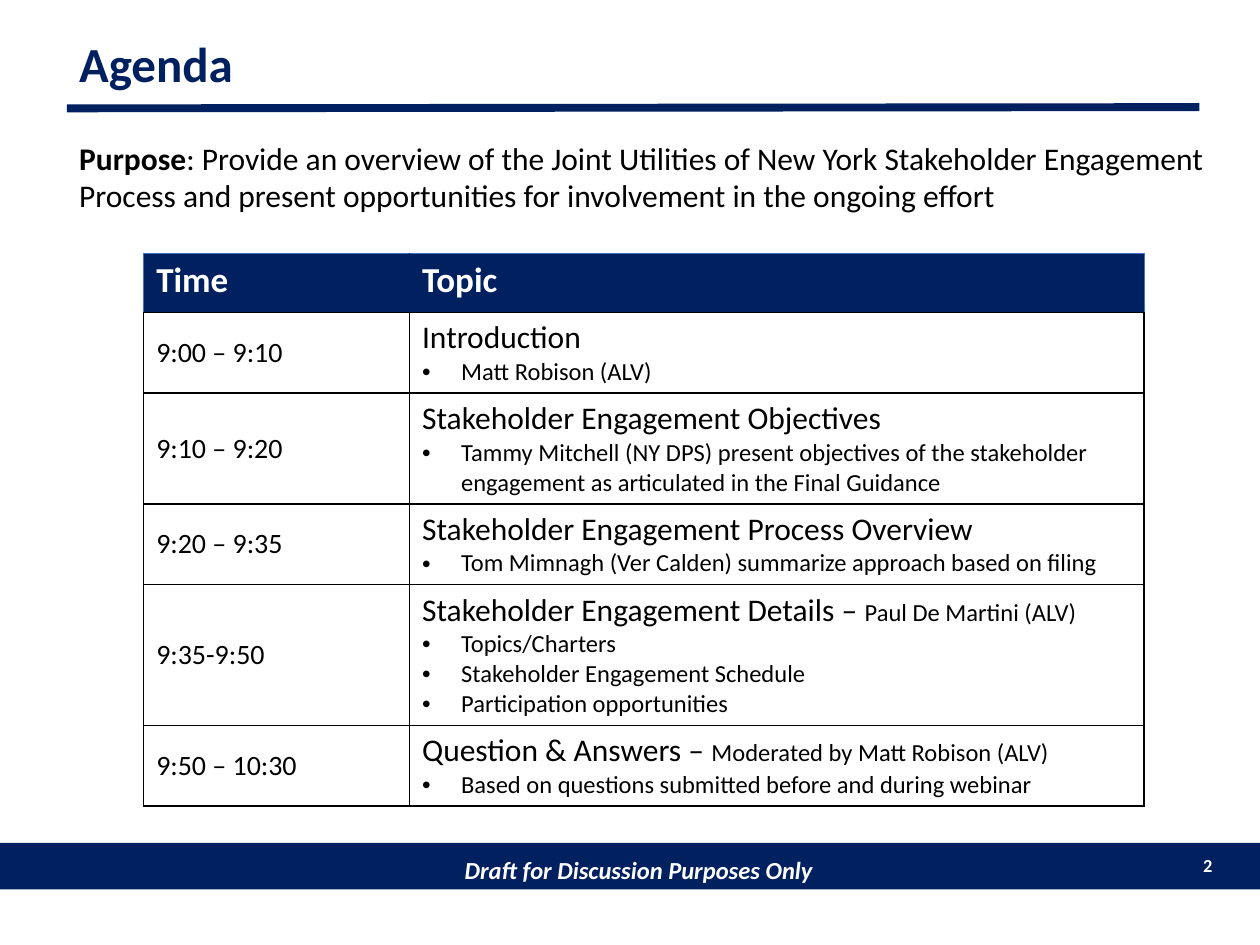
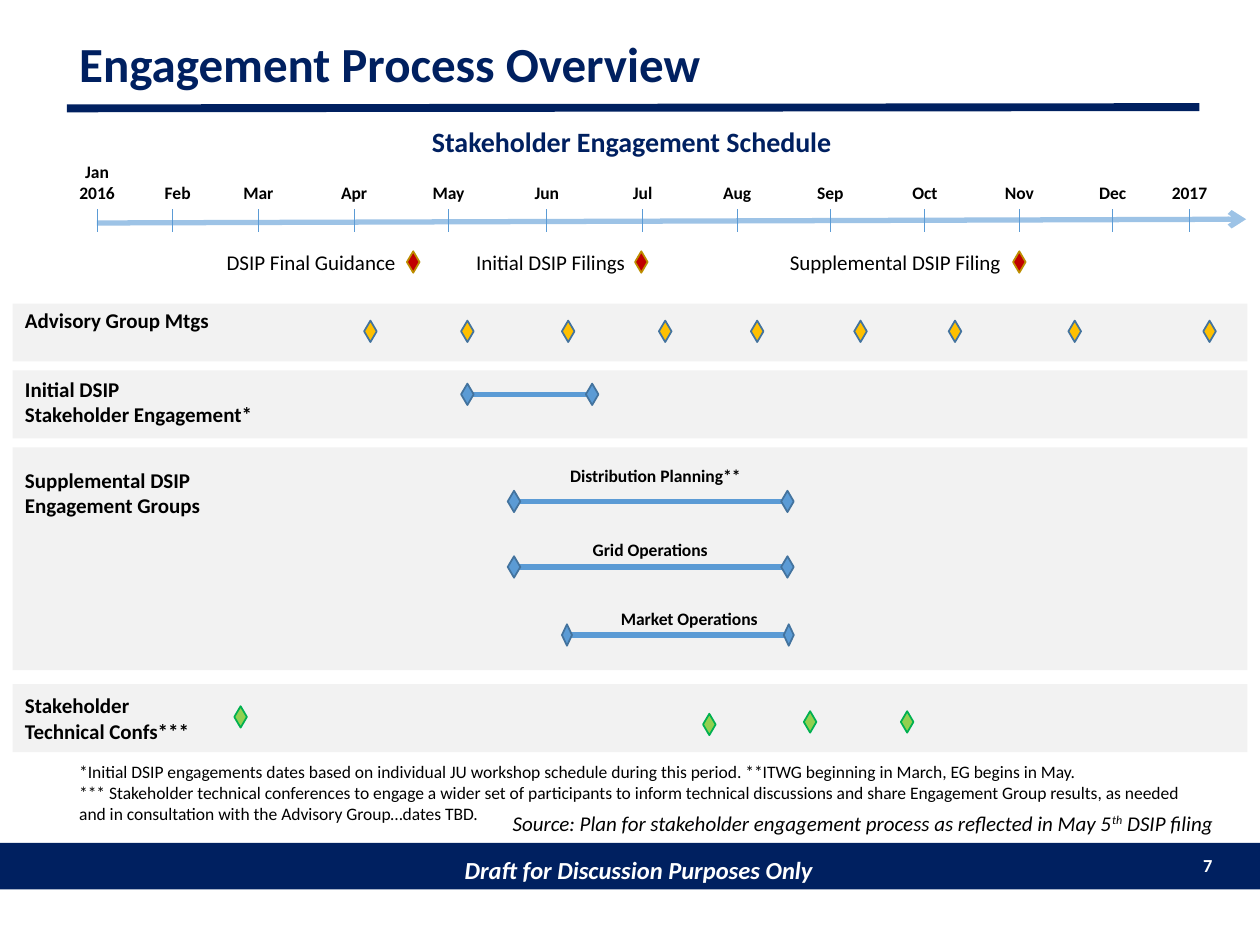
from pptx import Presentation, util as u
from pptx.dml.color import RGBColor
from pptx.enum import shapes, text
from pptx.oxml import parse_xml
from pptx.oxml.ns import nsdecls, qn
from lxml import etree

WIDTH, HEIGHT = 10, 7.5
FONT = "Calibri"
NAVY, BLACK, WHITE, BAND = "002060", "000000", "FFFFFF", "F2F2F2"
BLUE, PALE_BLUE, STEEL = "5B9BD5", "9DC3E6", "43739E"
GOLD, LIME, RED = ("FFC000", STEEL), ("92D050", "00B050"), ("C00000", "BD8E00")
SPAN = (BLUE, STEEL)
LEFT, CENTER, RIGHT = text.PP_ALIGN.LEFT, text.PP_ALIGN.CENTER, text.PP_ALIGN.RIGHT
TOP, MIDDLE, BOTTOM = text.MSO_ANCHOR.TOP, text.MSO_ANCHOR.MIDDLE, text.MSO_ANCHOR.BOTTOM

FOOTER = "Draft for Discussion Purposes Only"
PURPOSE = [("Purpose", {"bold": True}),
           ": Provide an overview of the Joint Utilities of New York Stakeholder Engagement "
           "Process and present opportunities for involvement in the ongoing effort"]
AGENDA_HEAD = ["Time", "Topic"]
AGENDA_COLUMNS = [2.11, 5.83]
AGENDA = [
    ("9:00 – 9:10", ["Introduction"], ["Matt Robison (ALV)"], 0.64),
    ("9:10 – 9:20", ["Stakeholder Engagement Objectives"],
     ["Tammy Mitchell (NY DPS) present objectives of the stakeholder engagement "
      "as articulated in the Final Guidance"], 0.88),
    ("9:20 – 9:35", ["Stakeholder Engagement Process Overview"],
     ["Tom Mimnagh (Ver Calden) summarize approach based on filing"], 0.64),
    ("9:35-9:50", ["Stakeholder Engagement Details – ", ("Paul De Martini (ALV)", {"size": 14})],
     ["Topics/Charters", "Stakeholder Engagement Schedule", "Participation opportunities"], 1.12),
    ("9:50 – 10:30", ["Question & Answers – ", ("Moderated by Matt Robison (ALV)", {"size": 14})],
     ["Based on questions submitted before and during webinar"], 0.64),
]

MONTHS = [("Jan 2016", 0.77), ("Feb", 1.37), ("Mar", 2.05), ("Apr", 2.81), ("May", 3.56),
          ("Jun", 4.34), ("Jul", 5.1), ("Aug", 5.85), ("Sep", 6.59), ("Oct", 7.34),
          ("Nov", 8.09), ("Dec", 8.83), ("2017", 9.44)]
LABEL_SHIFT = {"Feb": 0.04}
FILINGS = [("DSIP Final Guidance", 1.7, 1.56, 3.28),
           ("Initial DSIP Filings", 3.68, 1.4, 5.09),
           ("Supplemental DSIP Filing", 6.17, 1.96, 8.09)]
TRACKS = [(["Advisory Group Mtgs"], 2.41, 0.46, 2.39),
          (["Initial DSIP", "Stakeholder Engagement*"], 2.94, 0.54, 2.94),
          (["Supplemental DSIP", "Engagement Groups"], 3.55, 1.77, 3.66),
          (["Stakeholder", "Technical Confs***"], 5.43, 0.54, 5.45)]
MEETINGS = [2.94, 3.71, 4.51, 5.28, 6.01, 6.83, 7.58, 8.53, 9.6]
CONFERENCES = [(1.91, 5.69), (5.63, 5.75), (6.43, 5.73), (7.2, 5.73)]
ENGAGEMENTS = [(None, 3.71, 4.7, 3.13, 0.1), ("Distribution Planning**", 4.08, 6.25, 3.98, 0.1),
               ("Grid Operations", 4.08, 6.25, 4.5, 0.1), ("Market Operations", 4.5, 6.26, 5.04, 0.08)]
ENGAGEMENT_LABELS = {"Distribution Planning**": (5.2, 3.64), "Grid Operations": (5.16, 4.23),
                     "Market Operations": (5.47, 4.78)}
NOTES = ["*Initial DSIP engagements dates based on individual JU workshop schedule during this "
         "period. **ITWG beginning in March, EG begins in May.",
         "*** Stakeholder technical conferences to engage a wider set of participants to inform "
         "technical discussions and share Engagement Group results, as needed and in consultation "
         "with the Advisory Group…dates TBD."]
SOURCE = ["Source: Plan for stakeholder engagement process as reflected in May 5",
          ("th", {"raised": True}), " DSIP filing"]


def colour(value):
    return RGBColor.from_string(value)


def box(*lengths):
    return [u.Inches(length) for length in lengths]


def write(frame, paragraphs, size, ink=BLACK, bold=False, italic=False, align=LEFT, bullet=False):
    for i, parts in enumerate(paragraphs):
        paragraph = frame.paragraphs[0] if frame.text == "" and i == 0 else frame.add_paragraph()
        paragraph.alignment = align
        if bullet:
            properties = paragraph._p.get_or_add_pPr()
            properties.set("marL", str(u.Inches(0.31)))
            properties.set("indent", str(-u.Inches(0.31)))
            etree.SubElement(properties, qn("a:buFont")).set("typeface", "Arial")
            etree.SubElement(properties, qn("a:buChar")).set("char", "•")
        font = paragraph.font
        font.name, font.size, font.bold, font.italic = FONT, u.Pt(size), bold, italic
        font.color.rgb = colour(ink)
        for part in [parts] if isinstance(parts, str) else parts:
            words, style = (part, {}) if isinstance(part, str) else part
            run = paragraph.add_run()
            run.text = words
            if "size" in style:
                run.font.size = u.Pt(style["size"])
            if "bold" in style:
                run.font.bold = style["bold"]
            if "raised" in style:
                run._r.get_or_add_rPr().set("baseline", "30000")


def label(slide, at, paragraphs, size, anchor=TOP, wrap=True, **style):
    frame = slide.shapes.add_textbox(*box(*at)).text_frame
    frame.word_wrap = wrap
    frame.vertical_anchor = anchor
    write(frame, paragraphs, size, **style)
    return frame


def panel(slide, kind, at, fill, outline=None):
    shape = slide.shapes.add_shape(kind, *box(*at))
    shape.shadow.inherit = False
    shape.fill.solid()
    shape.fill.fore_color.rgb = colour(fill)
    if outline:
        shape.line.color.rgb = colour(outline)
        shape.line.width = u.Pt(1)
    else:
        shape.line.fill.background()
    return shape


def rule(slide, start, end, ink, weight, arrow=False):
    line = slide.shapes.add_connector(shapes.MSO_CONNECTOR.STRAIGHT, *box(*start, *end))
    line.line.color.rgb = colour(ink)
    line.line.width = u.Pt(weight)
    if arrow:
        etree.SubElement(line.line._get_or_add_ln(), qn("a:tailEnd")).set("type", "arrow")
    etree.SubElement(line._element.spPr, qn("a:effectLst"))


def diamond(slide, x, y, colours, width=0.1):
    height = 0.17
    panel(slide, shapes.MSO_SHAPE.FLOWCHART_DECISION,
          (x - width / 2, y - height / 2, width, height), *colours)


def start_slide(deck, title, number):
    slide = deck.slides.add_slide(deck.slide_layouts[6])
    footer = panel(slide, shapes.MSO_SHAPE.RECTANGLE, (0, 6.69, WIDTH, 0.37), NAVY).text_frame
    footer.margin_left = u.Inches(0.24)
    footer.margin_bottom = 0
    footer.vertical_anchor = MIDDLE
    write(footer, [FOOTER], 14, WHITE, bold=True, italic=True, align=CENTER)
    label(slide, (9.31, 6.73, 0.41, 0.29), [str(number)], 10.5, ink=WHITE, bold=True, align=RIGHT)
    rule(slide, (0.53, 0.86), (9.52, 0.85), NAVY, 4.5)
    heading = label(slide, (0.53, 0.25, 8.99, 0.55), [title], 28, MIDDLE, ink=NAVY, bold=True)
    heading.paragraphs[0].line_spacing = 0.9
    return slide


def dress_cell(cell, fill, borders):
    properties = cell._tc.get_or_add_tcPr()
    for side, (ink, weight) in zip("LRTB", borders):
        properties.append(parse_xml(
            f'<a:ln{side} {nsdecls("a")} w="{u.Pt(weight)}"><a:solidFill>'
            f'<a:srgbClr val="{ink}"/></a:solidFill></a:ln{side}>'))
    cell.fill.solid()
    cell.fill.fore_color.rgb = colour(fill)


def agenda_slide(deck):
    slide = start_slide(deck, "Agenda", 2)
    label(slide, (0.53, 1.05, 9.15, 0.71), [PURPOSE], 18)
    heights = [0.47] + [row[-1] for row in AGENDA]
    table = slide.shapes.add_table(len(heights), 2, *box(
        1.14, 2.01, sum(AGENDA_COLUMNS), sum(heights))).table
    table.first_row = table.horz_banding = False
    for column, width in zip(table.columns, AGENDA_COLUMNS):
        column.width = u.Inches(width)
    for row, height in zip(table.rows, heights):
        row.height = u.Inches(height)

    edge, inner, grid = ("4472C4", 0.5), (NAVY, 0.5), (BLACK, 1)
    for i, name in enumerate(AGENDA_HEAD):
        cell = table.cell(0, i)
        write(cell.text_frame, [name], 20, WHITE, bold=True)
        dress_cell(cell, NAVY, [(edge, inner)[i], (inner, edge)[i], edge, grid])
    for i, (time, topic, details, _) in enumerate(AGENDA, 1):
        time_cell, topic_cell = table.cell(i, 0), table.cell(i, 1)
        write(time_cell.text_frame, [time], 16)
        write(topic_cell.text_frame, [topic], 18)
        write_details = topic_cell.text_frame
        write(write_details, details, 14, bullet=True)
        for cell in (time_cell, topic_cell):
            cell.vertical_anchor = MIDDLE
            dress_cell(cell, WHITE, [grid] * 4)


def schedule_slide(deck):
    slide = start_slide(deck, "Engagement Process Overview", 7)
    label(slide, (0.53, 5.99, 9.02, 0.61), NOTES, 10)
    label(slide, (3.97, 6.38, 5.93, 0.3), [SOURCE], 12, italic=True)
    label(slide, (3.33, 0.94, 4.17, 0.37), ["Stakeholder Engagement Schedule"], 16,
          ink=NAVY, bold=True)

    rule(slide, (0.77, 1.77), (9.89, 1.74), PALE_BLUE, 3, arrow=True)
    for month, x in MONTHS:
        rule(slide, (x, 1.66), (x, 1.84), BLUE, 0.5)
        center = x + LABEL_SHIFT.get(month, 0)
        label(slide, (center - 0.26, 1.22, 0.52, 0.44), [month], 10, BOTTOM,
              bold=True, align=CENTER)
    for filing, left, width, x in FILINGS:
        label(slide, (left, 1.93, width, 0.3), [filing], 12, wrap=False)
        diamond(slide, x, 2.08, RED)

    for name, top, height, name_top in TRACKS:
        panel(slide, shapes.MSO_SHAPE.RECTANGLE, (0.1, top, WIDTH - 0.2, height), BAND)
        label(slide, (0.1, name_top, 2.03, 0.1 + 0.2 * len(name)), name, 12, wrap=False, bold=True)
    for x in MEETINGS:
        diamond(slide, x, 2.63, GOLD)
    for x, y in CONFERENCES:
        diamond(slide, x, y, LIME)
    for group, start, end, y, width in ENGAGEMENTS:
        if group:
            center, top = ENGAGEMENT_LABELS[group]
            label(slide, (center - 0.86, top, 1.72, 0.27), [group], 10, bold=True, align=CENTER)
        rule(slide, (start, y), (end, y), BLUE, 3)
        for x in (start, end):
            diamond(slide, x, y, SPAN, width)


def main():
    deck = Presentation()
    deck.slide_width, deck.slide_height = box(WIDTH, HEIGHT)
    agenda_slide(deck)
    schedule_slide(deck)
    deck.save("out.pptx")


if __name__ == "__main__":
    main()
